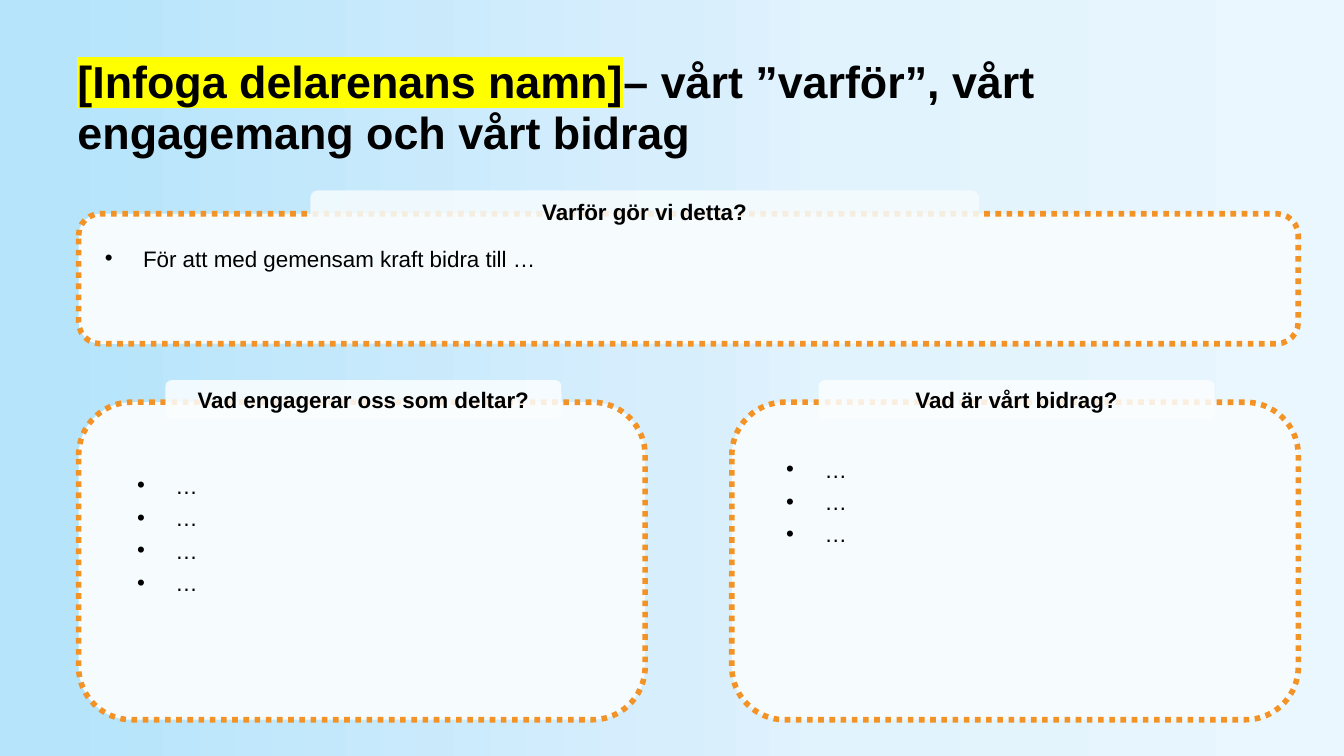
from pptx import Presentation
from pptx.dml.color import RGBColor
from pptx.enum.dml import MSO_LINE
from pptx.enum.shapes import MSO_SHAPE as Shape
from pptx.enum.text import MSO_ANCHOR as Anchor, PP_ALIGN as Align
from pptx.oxml import parse_xml
from pptx.oxml.ns import nsdecls
from pptx.util import Inches, Pt


def color(value):
    return RGBColor.from_string(value)


def element(xml):
    return parse_xml(xml.replace(" ", f" {nsdecls('a')} ", 1))


class SlideBuilder:
    """Draws styled elements at positions given in percent of the slide size."""

    font = "Arial"
    text_color = "000000"
    accent = "F39325"
    panel_fill = "F6FBFE"
    body_size = 16

    def __init__(self, presentation):
        self.width = presentation.slide_width
        self.height = presentation.slide_height
        self.slide = presentation.slides.add_slide(presentation.slide_layouts[6])

    def place(self, box):
        left, top, width, height = box
        return (round(self.width * left / 100), round(self.height * top / 100),
                round(self.width * width / 100), round(self.height * height / 100))

    def style(self, paragraph, size, bold=False):
        font = paragraph.font
        font.name, font.size, font.bold = self.font, Pt(size), bold
        font.color.rgb = color(self.text_color)

    def shape(self, kind, box):
        shape = self.slide.shapes.add_shape(kind, *self.place(box))
        shape.shadow.inherit = False
        shape.line.fill.background()
        return shape

    def text_box(self, box):
        frame = self.slide.shapes.add_textbox(*self.place(box)).text_frame
        frame.word_wrap = True
        return frame

    def backdrop(self, stops):
        fill = self.shape(Shape.RECTANGLE, (0, 0, 100, 100)).fill
        fill.gradient()
        fill.gradient_angle = 180
        stop_list = fill._fill._gradFill.gsLst
        for stop in list(stop_list):
            stop_list.remove(stop)
        for position, value in stops:
            stop_list.append(element(
                f'<a:gs pos="{position * 1000}"><a:srgbClr val="{value}"/></a:gs>'))

    def title(self, box, marked, rest):
        frame = self.text_box(box)
        frame.vertical_anchor = Anchor.BOTTOM
        paragraph = frame.paragraphs[0]
        paragraph.line_spacing = 0.95
        self.style(paragraph, 32, bold=True)
        run = paragraph.add_run()
        run.text = marked
        run._r.get_or_add_rPr().append(element(
            '<a:highlight ><a:srgbClr val="FFFF00"/></a:highlight>'))
        paragraph.add_run().text = rest

    def panel(self, box):
        shape = self.shape(Shape.ROUNDED_RECTANGLE, box)
        shape.fill.solid()
        shape.fill.fore_color.rgb = color(self.panel_fill)
        shape.line.color.rgb = color(self.accent)
        shape.line.width = Pt(4)
        shape.line.dash_style = MSO_LINE.ROUND_DOT

    def tag(self, box, text, fill):
        shape = self.shape(Shape.ROUNDED_RECTANGLE, box)
        shape.fill.solid()
        shape.fill.fore_color.rgb = color(fill)
        solid = shape.fill._fill._solidFill
        solid[0].append(element('<a:alpha val="86000"/>'))
        frame = shape.text_frame
        frame.vertical_anchor = Anchor.MIDDLE
        paragraph = frame.paragraphs[0]
        paragraph.text = text
        paragraph.alignment = Align.CENTER
        self.style(paragraph, self.body_size, bold=True)

    def bullets(self, box, items):
        frame = self.text_box(box)
        frame.margin_left = Inches(0.04)
        frame.margin_top = frame.margin_right = frame.margin_bottom = 0
        for index, item in enumerate(items):
            paragraph = frame.add_paragraph() if index else frame.paragraphs[0]
            paragraph.text = item
            paragraph.space_after = Pt(4)
            properties = paragraph._p.get_or_add_pPr()
            indent = Inches(0.38)
            properties.set("marL", str(indent))
            properties.set("indent", str(-indent))
            properties.append(element('<a:buFont typeface="Arial"/>'))
            properties.append(element('<a:buChar char="•"/>'))
            self.style(paragraph, self.body_size)


def main():
    presentation = Presentation()
    presentation.slide_width, presentation.slide_height = Inches(13.33), Inches(7.5)
    builder = SlideBuilder(presentation)

    builder.backdrop([(0, "EAF7FE"), (38, "E1F3FD"), (50, "D7EEFC"),
                      (96, "B5E4FB"), (100, "B3E3FA")])
    margin, right_column = 5.85, 54.45
    full_width, half_width = 90.75, 42.15
    builder.title((5.03, 11.33, full_width, 10.4), "[Infoga delarenans namn]",
                  "– vårt ”varför”, vårt engagemang och vårt bidrag")

    builder.panel((margin, 28.27, full_width, 17.2))
    builder.tag((23.1, 25.2, 49.73, 5.47), "Varför gör vi detta?", "F6FCFE")
    builder.bullets((7.5, 32.4, 87.7, 13.07),
                    ["För att med gemensam kraft bidra till …"])

    columns = [
        (margin, "Vad engagerar oss som deltar?", (9.9, 62.4, 38.78, 34.53), 4),
        (right_column, "Vad är vårt bidrag?", (58.2, 60.27, 38.78, 33.2), 3),
    ]
    for left, heading, list_box, count in columns:
        builder.panel((left, 53.2, half_width, 42))
        builder.tag((left + 6.45, 50.27, 29.48, 5.2), heading, "FBFEFF")
        builder.bullets(list_box, ["…"] * count)

    presentation.save("out.pptx")


if __name__ == "__main__":
    main()
